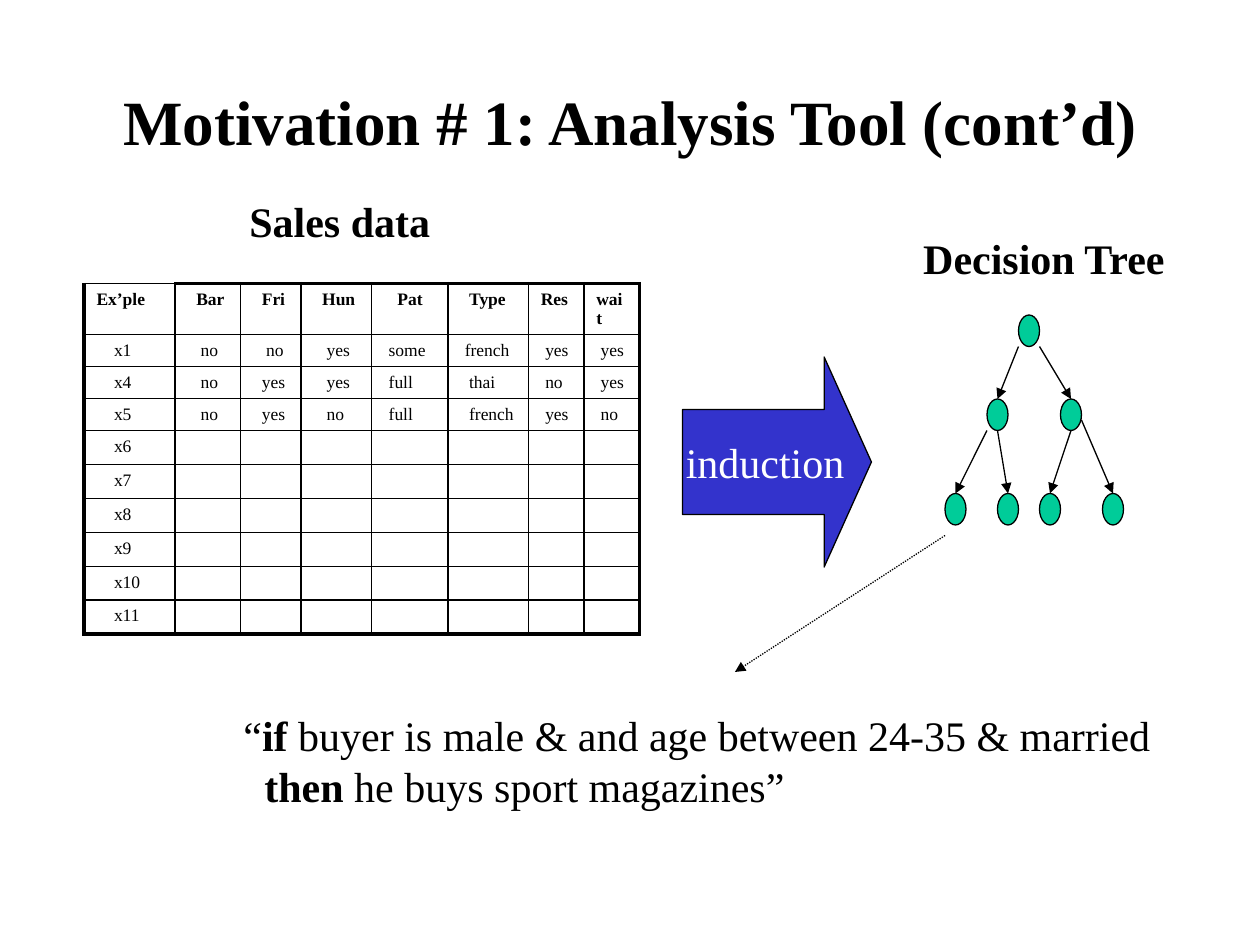
"""Build the slide on decision-tree induction from sales data."""
from lxml import etree
from pptx import Presentation
from pptx.dml.color import RGBColor
from pptx.enum.dml import MSO_LINE
from pptx.enum.shapes import MSO_CONNECTOR, MSO_SHAPE
from pptx.enum.text import MSO_ANCHOR, PP_ALIGN
from pptx.oxml.ns import qn
from pptx.util import Pt

BLACK = RGBColor(0x00, 0x00, 0x00)
WHITE = RGBColor(0xFF, 0xFF, 0xFF)
BLUE = RGBColor(0x33, 0x33, 0xCC)
GREEN = RGBColor(0x00, 0xCC, 0x99)
FONT = "Times New Roman"
STRAIGHT = MSO_CONNECTOR.STRAIGHT
ARROW, OVAL = MSO_SHAPE.RIGHT_ARROW, MSO_SHAPE.OVAL
CENTER, MIDDLE = PP_ALIGN.CENTER, MSO_ANCHOR.MIDDLE
DOTTED = MSO_LINE.ROUND_DOT
THIN, THICK = 1, 2.25


def add_text(p, text, size, bold=False, color=BLACK):
    r = p.add_run()
    r.text = text
    r.font.name, r.font.size, r.font.bold = FONT, Pt(size), bold
    r.font.color.rgb = color


def add_arrow(x1, y1, x2, y2):
    line = s.shapes.add_connector(STRAIGHT, Pt(x1), Pt(y1), Pt(x2), Pt(y2))
    line.line.color.rgb = BLACK
    line.line.width = Pt(0.75)
    ln = line.line._get_or_add_ln()
    etree.SubElement(ln, qn("a:tailEnd"), type="triangle")
    etree.SubElement(line._element.spPr, qn("a:effectLst"))
    return line


prs = Presentation()
prs.slide_width, prs.slide_height = Pt(720), Pt(540)
s = prs.slides.add_slide(prs.slide_layouts[5])

title = s.shapes.title
title.left, title.top, title.width, title.height = Pt(54), Pt(24), Pt(612), Pt(90)
tf = title.text_frame
tf.vertical_anchor = MIDDLE
tf.paragraphs[0].alignment = CENTER
add_text(tf.paragraphs[0], "Motivation # 1: Analysis Tool (cont’d)", 36, True)

header = ["Ex’ple", "Bar", "Fri", "Hun", "Pat", "Type", "Res", "wait"]
records = [
    ["x1", "no", "no", "yes", "some", "french", "yes", "yes"],
    ["x4", "no", "yes", "yes", "full", "thai", "no", "yes"],
    ["x5", "no", "yes", "no", "full", "french", "yes", "no"],
]
rows = [header] + records + [[f"x{n}"] + [""] * 7 for n in range(6, 12)]
header_indents = [0, 2, 2, 2, 3, 2, 0, 0]
body_indents = [4, 3, 2, 3, 1, 2, 1, 1]
indent_exceptions = {(1, 2): 3, (1, 5): 1}
col_widths = [52, 37.5, 34.5, 40.5, 43.5, 46, 31.7, 31.7]
header_height, row_height = 29.2, 18.3
table_height = header_height + row_height * (len(rows) - 1)

frame = s.shapes.add_table(len(rows), len(header), Pt(48), Pt(162),
                           Pt(sum(col_widths)), Pt(table_height))
table = frame.table
table.first_row = table.horz_banding = False
for column, width in zip(table.columns, col_widths):
    column.width = Pt(width)
for i, values in enumerate(rows):
    table.rows[i].height = Pt(row_height if i else header_height)
    for j, value in enumerate(values):
        cell = table.cell(i, j)
        indents = body_indents if i else header_indents
        cell.margin_left = Pt(7.2 + 2.5 * indent_exceptions.get((i, j), indents[j]))
        p = cell.text_frame.paragraphs[0]
        if value:
            add_text(p, value, 10, i == 0)
        else:
            p._p.get_or_add_endParaRPr().set("sz", "1000")
        borders = {
            "a:lnL": THICK if j == 0 else THIN,
            "a:lnR": THICK if j == len(header) - 1 else THIN,
            "a:lnT": THICK if i == 0 and j > 0 else THIN,
            "a:lnB": THICK if i == len(rows) - 1 else THIN,
        }
        for tag, width in borders.items():
            ln = etree.SubElement(cell._tc.get_or_add_tcPr(), qn(tag), w=str(Pt(width)))
            fill = etree.SubElement(ln, qn("a:solidFill"))
            etree.SubElement(fill, qn("a:srgbClr"), val=str(BLACK))
        cell.fill.background()

captions = [("Sales data", 135.4, 108, 118), ("Decision Tree", 520.5, 129.6, 155)]
for text, x, y, width in captions:
    box = s.shapes.add_textbox(Pt(x), Pt(y), Pt(width), Pt(36))
    box.text_frame.word_wrap = False
    add_text(box.text_frame.paragraphs[0], text, 24, True)

add_arrow(540, 306, 420, 384).line.dash_style = DOTTED

rule = s.shapes.add_textbox(Pt(132), Pt(402), Pt(538.5), Pt(65))
tf = rule.text_frame
tf.word_wrap = False
p = tf.paragraphs[0]
add_text(p, "“", 24)
add_text(p, "if", 24, True)
add_text(p, " buyer is male & and age between 24-35 & married", 24)
p = tf.add_paragraph()
p._p.get_or_add_pPr().set("marL", str(Pt(12)))
add_text(p, "then", 24, True)
add_text(p, " he buys sport magazines”", 24)

induction = s.shapes.add_shape(ARROW, Pt(390), Pt(204), Pt(108), Pt(120))
induction.adjustments[0], induction.adjustments[1] = 0.5, 0.25
tf = induction.text_frame
tf.word_wrap = False
tf.vertical_anchor = MIDDLE
tf.paragraphs[0].alignment = CENTER
add_text(tf.paragraphs[0], "induction", 24, color=WHITE)

tree_levels = {180: [582], 228: [564, 606], 282: [540, 570, 594, 630]}
nodes = [s.shapes.add_shape(OVAL, Pt(x), Pt(y), Pt(12), Pt(18))
         for y, xs in tree_levels.items() for x in xs]
for sp in [induction] + nodes:
    sp.shadow.inherit = False
    sp.fill.solid()
    sp.fill.fore_color.rgb = BLUE if sp is induction else GREEN
    sp.line.color.rgb = BLACK
    sp.line.width = Pt(0.75)

branches = [
    (582, 198, 570, 228), (594, 198, 612, 228),
    (564, 246, 546, 282), (570, 246, 576, 282),
    (612, 246, 600, 282), (618, 240, 636, 282),
]
for branch in branches:
    add_arrow(*branch)

prs.save("out.pptx")
